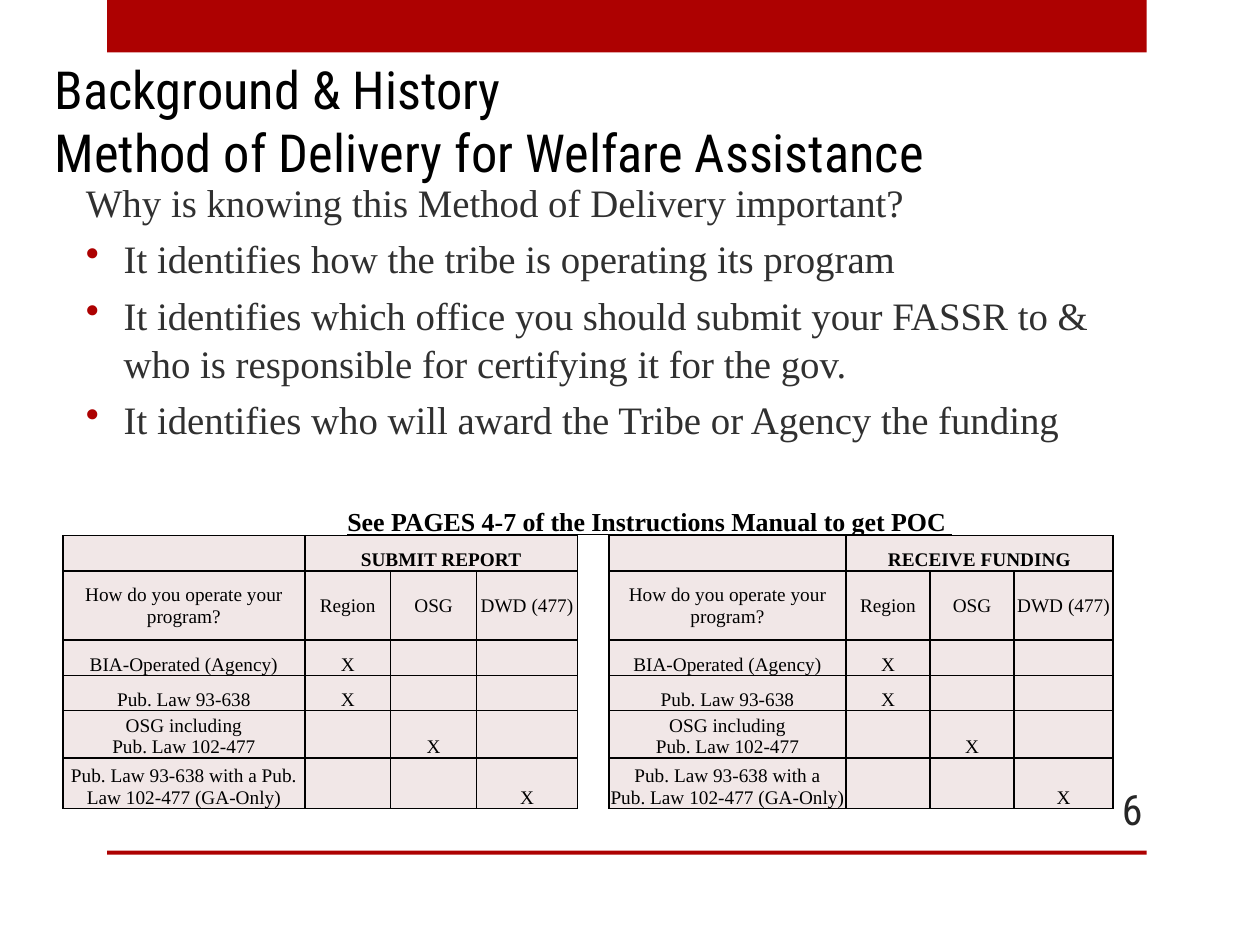
"""Builds the slide on the method of delivery for welfare assistance."""
from lxml.etree import SubElement
from pptx import Presentation
from pptx.dml.color import RGBColor
from pptx.enum.shapes import MSO_SHAPE
from pptx.enum.text import MSO_ANCHOR as ANCHOR, PP_ALIGN as ALIGN
from pptx.oxml import parse_xml
from pptx.oxml.ns import nsdecls, qn
from pptx.util import Inches, Pt

RED, BLACK, GREY, CELL = "AD0101", "000000", "303030", "F1E7E7"
SERIF, CONDENSED = "Times New Roman", "Roboto Condensed"
colour = RGBColor.from_string


def grid(*cells):
    """Turns twelfths of an inch into lengths."""
    return [Inches(cell / 12) for cell in cells]


def write(paragraph, text, size, font=SERIF, ink=BLACK, bold=False, underline=False,
          align=ALIGN.LEFT, before=0, spacing=1.0, indent=0, hanging=0, bullet=None):
    """Fills one paragraph with formatted text."""
    paragraph.alignment = align
    paragraph.space_before = Pt(before)
    paragraph.line_spacing = spacing
    properties = paragraph._p.get_or_add_pPr()
    properties.set("marL", str(Inches(indent)))
    properties.set("indent", str(-Inches(hanging)))
    if bullet:
        bullet_colour = SubElement(properties, qn("a:buClr"))
        SubElement(bullet_colour, qn("a:srgbClr"), val=RED)
        SubElement(properties, qn("a:buChar"), char=bullet)
    paragraph.text = text
    for run in paragraph.runs:
        run.font.size, run.font.name = Pt(size), font
        run.font.bold, run.font.underline = bold, underline
        run.font.color.rgb = colour(ink)
    if not text:
        SubElement(paragraph._p, qn("a:endParaRPr"), sz=str(size * 100))


deck = Presentation()
deck.slide_width, deck.slide_height = grid(120, 90)
slide = deck.slides.add_slide(deck.slide_layouts[5])

for top, height in ((0, 5), (81, 0.4)):
    band = slide.shapes.add_shape(MSO_SHAPE.RECTANGLE, *grid(10.2, top, 99, height))
    band.shadow.inherit = False
    band.fill.solid()
    band.fill.fore_color.rgb = colour(RED)
    band.line.fill.background()

heading = slide.shapes.title
heading.left, heading.top, heading.width, heading.height = grid(4, 11, 108, 7)
heading.text_frame.vertical_anchor = ANCHOR.BOTTOM
write(heading.text_frame.paragraphs[0],
      "Background & History\vMethod of Delivery for Welfare Assistance", 30, font=CONDENSED)

reasons = slide.shapes.add_textbox(*grid(7, 19, 102, 30)).text_frame
reasons.word_wrap = True
reasons.vertical_anchor = ANCHOR.MIDDLE
write(reasons.paragraphs[0], "Why is knowing this Method of Delivery important?",
      22.2, ink=GREY, spacing=1.03)
for reason in (
    "It identifies how the tribe is operating its program",
    "It identifies which office you should submit your FASSR to & "
    "who is responsible for certifying it for the gov.",
    "It identifies who will award the Tribe or Agency the funding",
):
    write(reasons.add_paragraph(), reason, 22.2, ink=GREY, before=4.8, spacing=1.03,
          indent=0.3, hanging=0.3, bullet="•")
write(reasons.add_paragraph(), "See PAGES 4-7 of the Instructions Manual to get POC ", 14.8,
      bold=True, underline=True, align=ALIGN.CENTER, before=36, indent=0.65)

page = slide.shapes.add_textbox(*grid(100, 74.6, 10, 4.8)).text_frame
page.word_wrap = True
page.vertical_anchor = ANCHOR.MIDDLE
write(page.paragraphs[0], "6", 24, font=CONDENSED, ink="262626", align=ALIGN.RIGHT)

column_shares = (0.47, 0.167, 0.167, 0.196)
row_heights = (0.28, 0.55, 0.28, 0.28, 0.35, 0.4)
for purpose, left, width, gap in (("SUBMIT REPORT", 6, 49, " "), ("RECEIVE FUNDING", 58, 48, "\v")):
    rows = (
        ("", purpose, "", ""),
        ("How do you operate your program?", "Region", "OSG", "DWD (477)"),
        ("BIA-Operated (Agency)", "X", "", ""),
        ("Pub. Law 93-638", "X", "", ""),
        ("OSG including\vPub. Law 102-477", "", "X", ""),
        (f"Pub. Law 93-638 with a{gap}Pub. Law 102-477 (GA-Only)", "", "", "X"),
    )
    offices = slide.shapes.add_table(len(rows), 4, *grid(left, 51, width, 25.7)).table
    offices.first_row = offices.horz_banding = False
    for column, share in zip(offices.columns, column_shares):
        column.width = grid(width * share)[0]
    for r, labels in enumerate(rows):
        offices.rows[r].height = Inches(row_heights[r])
        for c, label in enumerate(labels):
            cell = offices.cell(r, c)
            cell.margin_left = cell.margin_right = cell.margin_top = Inches(0.01)
            cell.margin_bottom = 0
            cell.vertical_anchor = ANCHOR.MIDDLE if r == 1 else ANCHOR.BOTTOM
            for side in "LRTB":
                cell._tc.get_or_add_tcPr().append(parse_xml(
                    f'<a:ln{side} {nsdecls("a")} w="12700"><a:solidFill>'
                    f'<a:srgbClr val="{BLACK}"/></a:solidFill></a:ln{side}>'))
            cell.fill.solid()
            cell.fill.fore_color.rgb = colour(CELL)
            write(cell.text_frame.paragraphs[0], label, 11, bold=r == 0, align=ALIGN.CENTER)
    offices.cell(0, 1).merge(offices.cell(0, 3))

deck.save("out.pptx")
